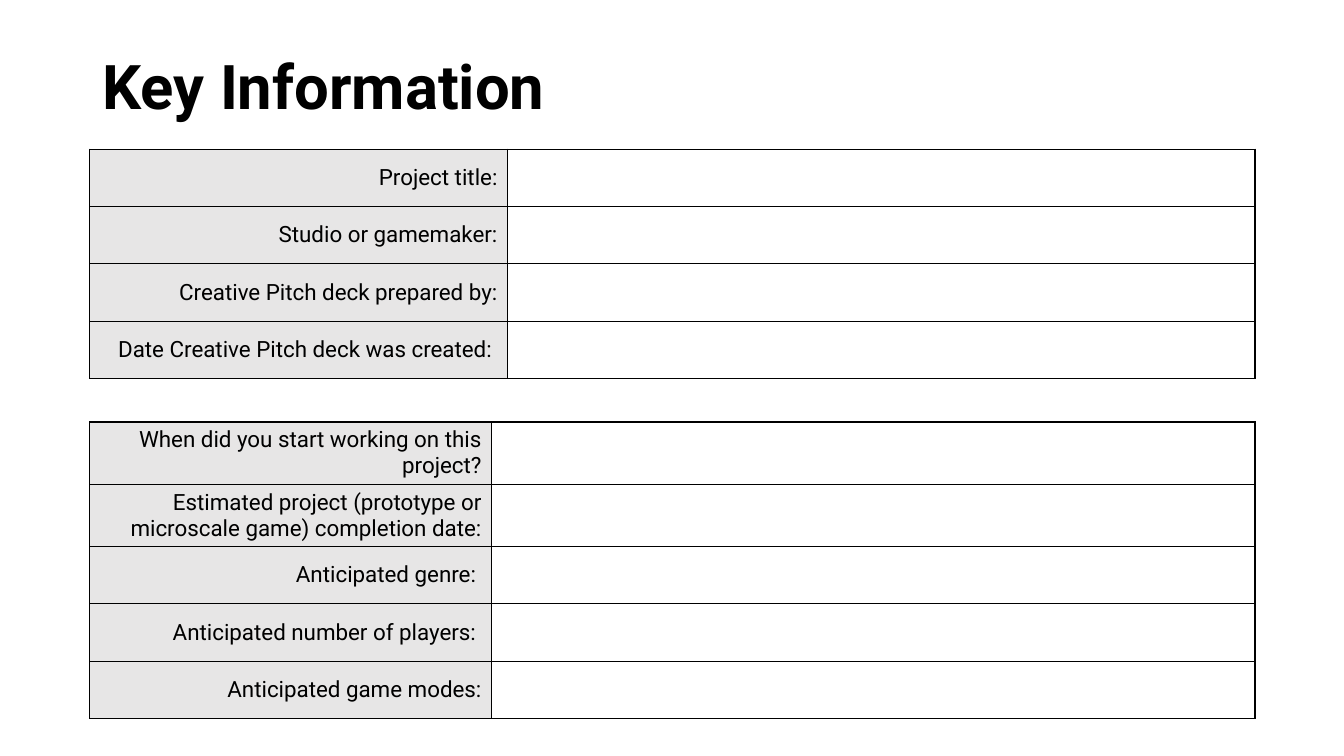
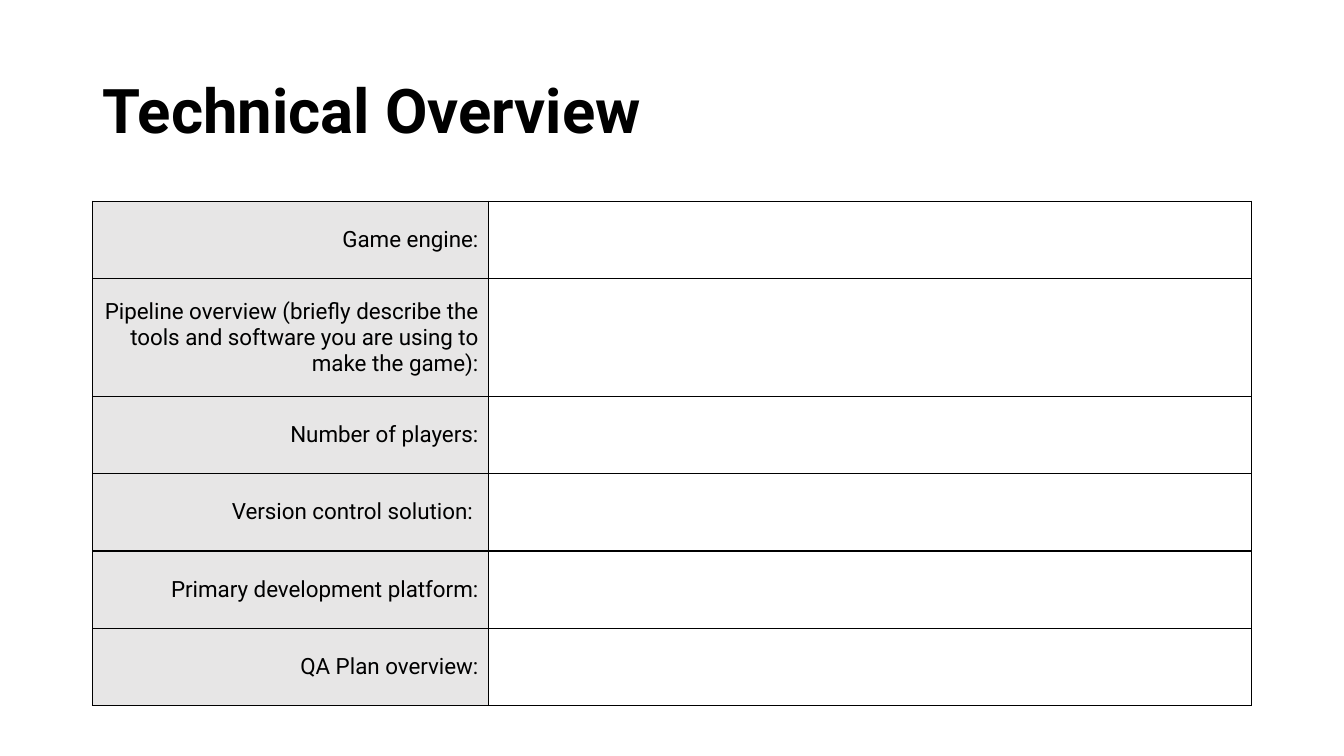
from lxml.etree import SubElement
from pptx import Presentation
from pptx.dml.color import RGBColor
from pptx.enum.text import MSO_ANCHOR, MSO_AUTO_SIZE, PP_ALIGN
from pptx.oxml.ns import qn
from pptx.util import Pt

FONT = "Roboto"
BLACK = "000000"
LABEL_FILL = "E7E6E6"
TITLE_LEFT, TITLE_WIDTH, TITLE_HEIGHT = 66, 828, 104.4


def add_run(p, text, size, bold=False):
    r = p.add_run()
    r.text = text
    r.font.name = FONT
    r.font.size = Pt(size)
    r.font.bold = bold
    r.font.color.rgb = RGBColor.from_string(BLACK)


def add_borders(cell):
    tc_pr = cell._tc.get_or_add_tcPr()
    for side in ("a:lnL", "a:lnR", "a:lnT", "a:lnB"):
        ln = SubElement(tc_pr, qn(side), w=str(Pt(1)))
        SubElement(SubElement(ln, qn("a:solidFill")), qn("a:srgbClr"), val=BLACK)


# Each form: left, top, label width, answer width, then (label, row height) pairs
slides = [
    ("Key Information", 11.5, [
        (64, 106.5, 298.6, 533.8, [
            ("Project title:", 41),
            ("Studio or gamemaker:", 41),
            ("Creative Pitch deck prepared by:", 41),
            ("Date Creative Pitch deck was created: ", 41),
        ]),
        (64, 301.5, 287.2, 545.2, [
            ("When did you start working on this project?", 41),
            ("Estimated project (prototype or microscale game) completion date:", 41),
            ("Anticipated genre: ", 41),
            ("Anticipated number of players: ", 41),
            ("Anticipated game modes:", 41),
        ]),
    ]),
    ("Technical Overview", 28.75, [
        (66, 143.75, 283, 545, [
            ("Game engine:", 55.2),
            ("Pipeline overview (briefly describe the tools and software "
             "you are using to make the game):", 84.2),
            ("Number of players:", 55.2),
            ("Version control solution: ", 55.2),
            ("Primary development platform:", 55.2),
            ("QA Plan overview:", 55.2),
        ]),
    ]),
]

prs = Presentation()
prs.slide_width, prs.slide_height = Pt(960), Pt(540)
title_only = prs.slide_layouts[5]

for title_text, title_top, forms in slides:
    s = prs.slides.add_slide(title_only)

    title = s.shapes.title
    title.left, title.top = Pt(TITLE_LEFT), Pt(title_top)
    title.width, title.height = Pt(TITLE_WIDTH), Pt(TITLE_HEIGHT)
    tf = title.text_frame
    tf.auto_size = MSO_AUTO_SIZE.NONE
    tf.vertical_anchor = MSO_ANCHOR.MIDDLE
    p = tf.paragraphs[0]
    p.alignment = PP_ALIGN.LEFT
    p.line_spacing = 0.9
    add_run(p, title_text, 44, bold=True)

    for left, top, label_width, answer_width, rows in forms:
        height = sum(row_height for _, row_height in rows)
        table = s.shapes.add_table(len(rows), 2, Pt(left), Pt(top),
                                   Pt(label_width + answer_width), Pt(height)).table
        table.first_row = table.horz_banding = False
        table.columns[0].width = Pt(label_width)
        table.columns[1].width = Pt(answer_width)

        for i, (label, row_height) in enumerate(rows):
            table.rows[i].height = Pt(row_height)
            label_cell, answer_cell = table.cell(i, 0), table.cell(i, 1)
            for cell in (label_cell, answer_cell):
                add_borders(cell)
                cell.vertical_anchor = MSO_ANCHOR.MIDDLE
            label_cell.fill.solid()
            label_cell.fill.fore_color.rgb = RGBColor.from_string(LABEL_FILL)
            answer_cell.fill.background()
            p = label_cell.text_frame.paragraphs[0]
            p.alignment = PP_ALIGN.RIGHT
            add_run(p, label, 16)

prs.save("out.pptx")
